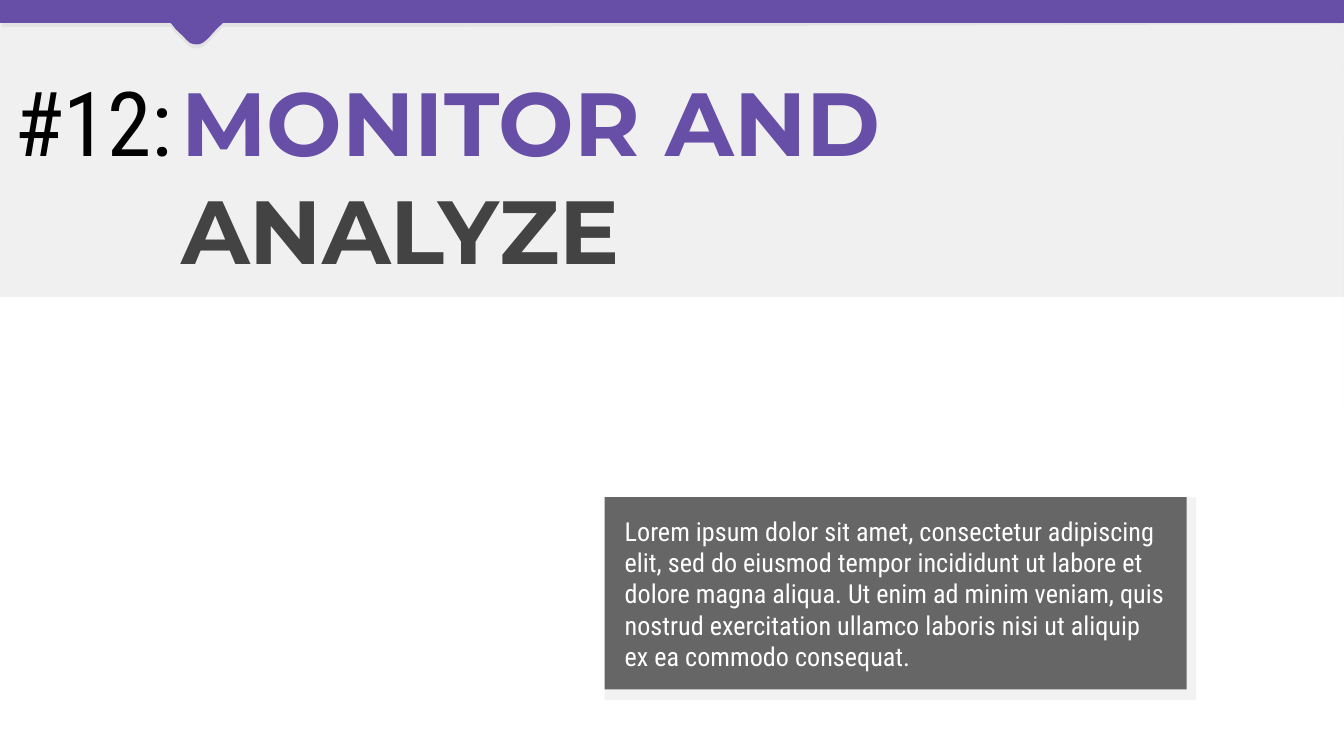
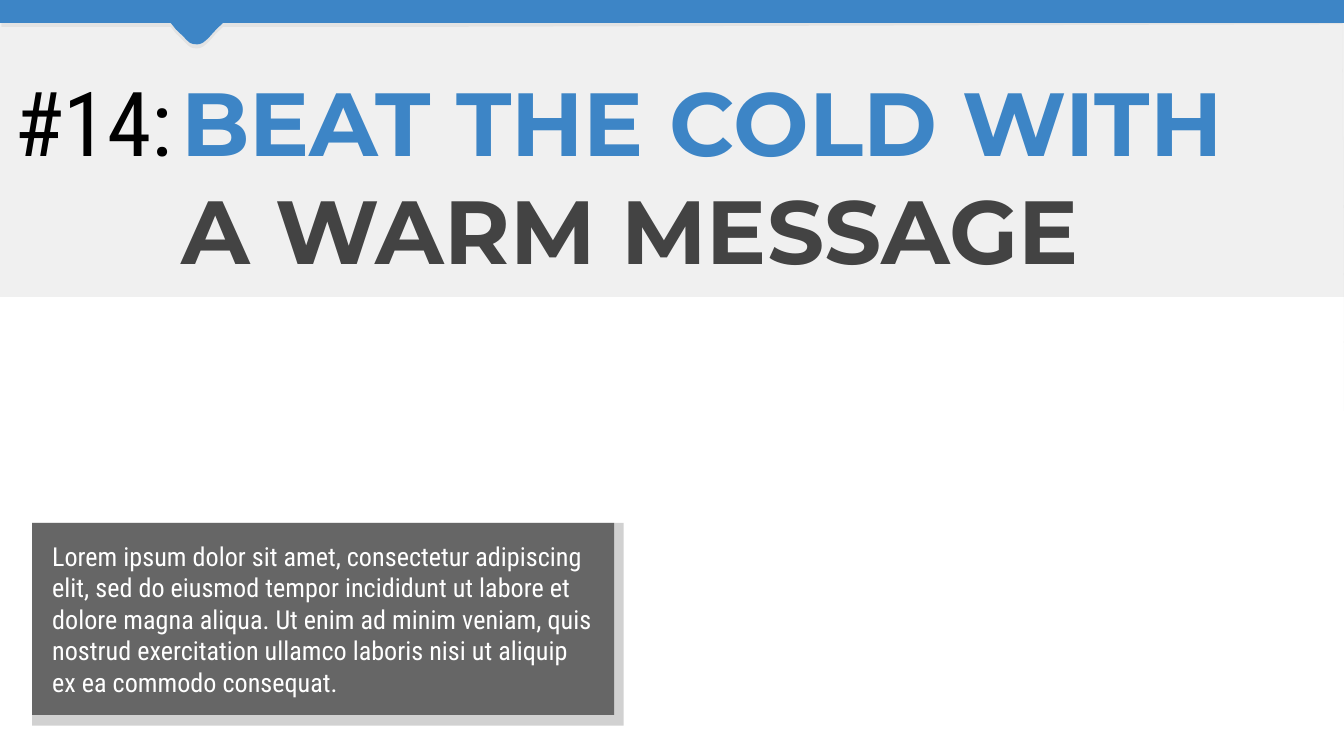
from dataclasses import dataclass

from lxml.etree import SubElement
from pptx import Presentation
from pptx.dml.color import RGBColor as Rgb
from pptx.enum.shapes import MSO_SHAPE as Preset
from pptx.enum.text import MSO_ANCHOR as Anchor
from pptx.oxml.ns import qn
from pptx.util import Inches, Pt


@dataclass(frozen=True)
class Theme:
    """Colours, fonts and type sizes of the deck."""
    purple: str = "674EA7"
    blue: str = "3D85C6"
    header: str = "EEEEEE"
    panel: str = "666666"
    heading: str = "434343"
    black: str = "000000"
    white: str = "FFFFFF"
    title_font: str = "Montserrat"
    body_font: str = "Roboto Condensed"
    title_size: int = 48
    body_size: int = 14


THEME = Theme()
SLIDE_W = 10
SLIDE_H = SLIDE_W * 9 / 16
BAND_BASE = 0.17
SHADOW_DROP = 0.03
PANEL_W, PANEL_H = 4.33, 1.43
PANEL_SHADOW = (0.07, 0.08)
PANEL_PAD = 0.05
LOREM = ("Lorem ipsum dolor sit amet, consectetur adipiscing elit, sed do eiusmod "
         "tempor incididunt ut labore et dolore magna aliqua. Ut enim ad minim veniam, "
         "quis nostrud exercitation ullamco laboris nisi ut aliquip ex ea commodo consequat.")
TIPS = [
    dict(number="#12:", title=("MONITOR AND", "ANALYZE"), accent=THEME.purple,
         panel_at=(4.5, 3.7), shade=5),
    dict(number="#14:", title=("BEAT THE COLD WITH", "A WARM MESSAGE"), accent=THEME.blue,
         panel_at=(0.24, 3.89), shade=18),
]


def paint(shape, color, opacity=100):
    """Give a shape a flat fill of some opacity, with no line or shadow."""
    shape.shadow.inherit = False
    shape.line.fill.background()
    shape.fill.solid()
    shape.fill.fore_color.rgb = Rgb.from_string(color)
    if opacity < 100:
        solid = shape.element.spPr.find(qn("a:solidFill"))
        SubElement(solid[0], qn("a:alpha"), val=str(opacity * 1000))


def add_block(shapes, box, color, opacity=100):
    """Add a filled rectangle."""
    block = shapes.add_shape(Preset.RECTANGLE, *map(Inches, box))
    paint(block, color, opacity)


def add_outline(shapes, points, color, opacity=100):
    """Add a filled closed outline through points given in inches."""
    start, *rest = [(Inches(x), Inches(y)) for x, y in points]
    builder = shapes.build_freeform(*start)
    builder.add_line_segments(rest, close=True)
    paint(builder.convert_to_shape(), color, opacity)


def add_text(shapes, box, lines, *, colors, font, size, bold=False, anchor=Anchor.TOP):
    """Add a text box with one paragraph for each line and colour."""
    frame = shapes.add_textbox(*map(Inches, box)).text_frame
    frame.word_wrap = True
    frame.vertical_anchor = anchor
    frame.margin_left = frame.margin_right = Inches(0.1)
    frame.margin_top = frame.margin_bottom = Inches(0.1)
    for index, (line, color) in enumerate(zip(lines, colors)):
        paragraph = frame.add_paragraph() if index else frame.paragraphs[0]
        run = paragraph.add_run()
        run.text = line
        run.font.name = font
        run.font.size = Pt(size)
        run.font.bold = bold
        run.font.color.rgb = Rgb.from_string(color)


def curve(start, first, second, end, steps=12):
    """Return points along a cubic curve, without its start."""
    def blend(t, a, b, c, d):
        u = 1 - t
        return u**3 * a + 3 * u**2 * t * b + 3 * u * t**2 * c + t**3 * d
    return [tuple(blend(i / steps, *axis) for axis in zip(start, first, second, end))
            for i in range(1, steps + 1)]


def notch(left, base):
    """Return the rounded notch below a base line, from left to right."""
    shoulder, tip, rise = (0.04, 0.05), (0.2, 0.16), (0.37, 0.02)
    profile = [(0, 0), shoulder,
               *curve(shoulder, (0.14, 0.14), (0.13, 0.16), tip),
               *curve(tip, (0.26, 0.16), (0.31, 0.07), rise), (0.39, 0)]
    return [(left + x, base + y) for x, y in profile]


def draw_band(shapes, left, top, width, accent):
    """Draw the coloured top band with its notch."""
    right, base = left + width, top + BAND_BASE
    edge = notch(left + 1.27, base)
    add_outline(shapes, [(left, top - 0.01), (right, top - 0.01), (right, base),
                         *reversed(edge), (left, base)], accent)


def draw_band_shadow(shapes, left, top, width, height):
    """Draw the thin shadow under the band and down the right side."""
    base, right, taper = top + BAND_BASE, left + width, left + 3.29
    low = base + SHADOW_DROP
    add_outline(shapes, [
        (right - 0.01, base - 0.02), (right + 0.01, top + height - 0.01),
        (right - 0.01, base + 0.01), (taper, low),
        *reversed(notch(left + 1.27, low)), (left + 0.01, low), (left + 0.01, base),
        *notch(left + 1.27, base), (taper, base)], THEME.black, 5)


def draw_header(shapes, left, top, number, title, accent):
    """Draw the header with its number, two-line title and band."""
    add_block(shapes, (left, top + 0.17, SLIDE_W, 2.04), THEME.header, 85)
    draw_band_shadow(shapes, left, top, SLIDE_W, SLIDE_H)
    add_text(shapes, (left + 0.01, top + 0.4, 1.43, 0.56), [number],
             colors=[THEME.black], font=THEME.body_font, size=THEME.title_size)
    add_text(shapes, (left + 1.25, top + 0.4, 9.12, 0.58), title,
             colors=[accent, THEME.heading], font=THEME.title_font,
             size=THEME.title_size, bold=True)
    draw_band(shapes, left, top, SLIDE_W, accent)


def draw_panel(shapes, left, top, text, shade):
    """Draw the grey text panel over its offset shadow."""
    extra_w, extra_h = PANEL_SHADOW
    add_block(shapes, (left, top, PANEL_W + extra_w, PANEL_H + extra_h), THEME.black, shade)
    panel = shapes.add_group_shape().shapes
    add_block(panel, (left, top, PANEL_W, PANEL_H), THEME.panel)
    add_text(panel, (left + PANEL_PAD, top + PANEL_PAD,
                     PANEL_W - 2 * PANEL_PAD, PANEL_H - 2 * PANEL_PAD), [text],
             colors=[THEME.white], font=THEME.body_font, size=THEME.body_size,
             anchor=Anchor.MIDDLE)


def build_tip(deck, number, title, accent, panel_at, shade):
    """Add one numbered tip slide."""
    shapes = deck.slides.add_slide(deck.slide_layouts[6]).shapes
    draw_header(shapes, 0, 0, number, title, accent)
    draw_panel(shapes, *panel_at, LOREM, shade)


def main():
    """Build and save the deck."""
    deck = Presentation()
    deck.slide_width, deck.slide_height = Inches(SLIDE_W), Inches(SLIDE_H)
    for tip in TIPS:
        build_tip(deck, **tip)
    deck.save("out.pptx")


if __name__ == "__main__":
    main()
